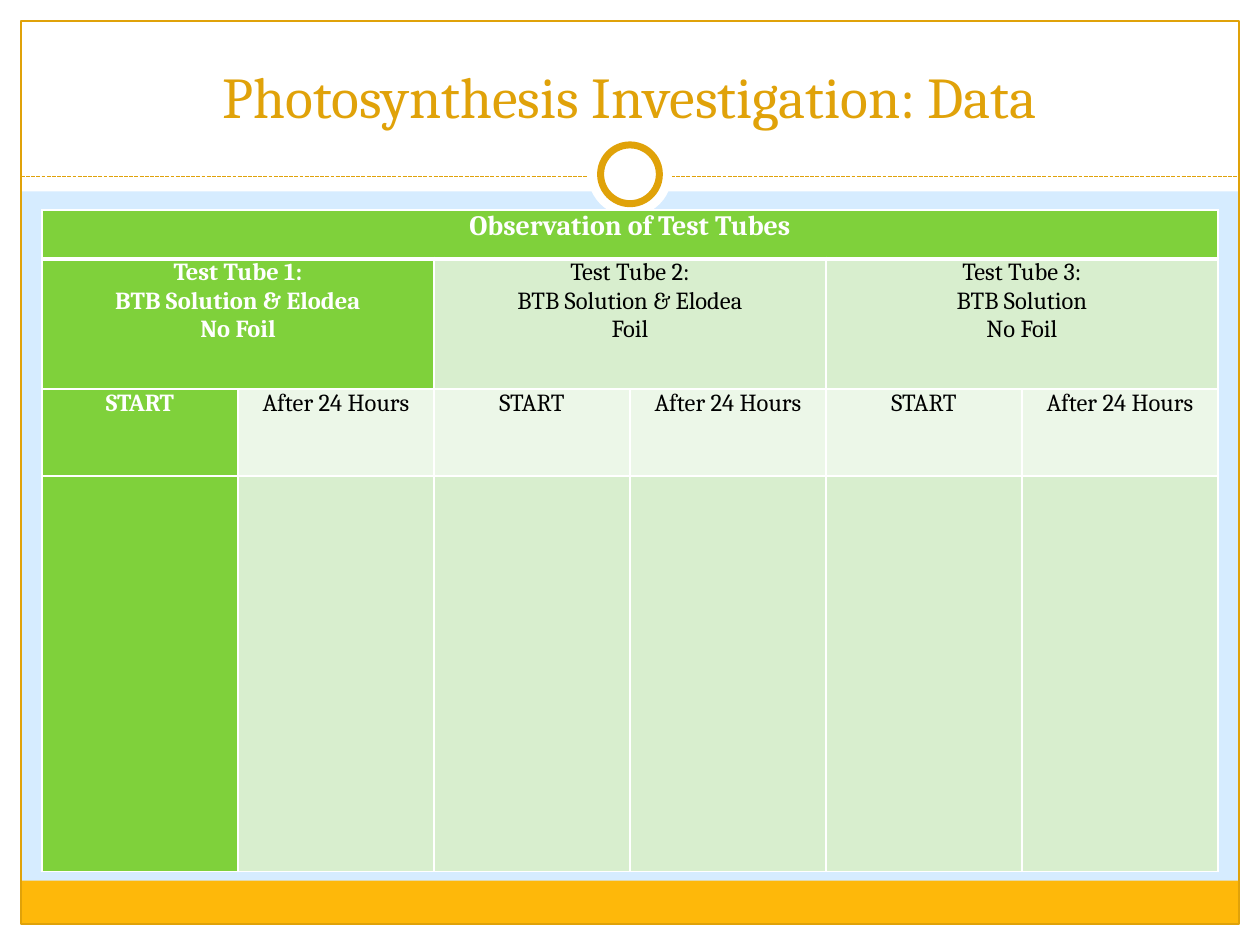
import pptx
import pptx.dml.color
import pptx.enum.dml
import pptx.enum.shapes
import pptx.enum.text
import pptx.oxml
import pptx.oxml.ns
import pptx.util

COLS, ROWS = 60, 45
WHITE, GOLD, AMBER, SKY = "FFFFFF", "E0A209", "FEB80A", "D6ECFF"
GREEN, MID_GREEN, PALE_GREEN = "7FD13B", "D8EECE", "ECF7E8"
RECT = pptx.enum.shapes.MSO_SHAPE.RECTANGLE
OVAL = pptx.enum.shapes.MSO_SHAPE.OVAL


def rgb(value):
    return pptx.dml.color.RGBColor.from_string(value)


class Deck:
    font = "Cambria"

    def __init__(self):
        self.prs = pptx.Presentation()
        self.prs.slide_width = pptx.util.Inches(10)
        self.prs.slide_height = pptx.util.Inches(7.5)
        self.s = self.prs.slides.add_slide(self.prs.slide_layouts[6])
        self.s.background.fill.solid()
        self.s.background.fill.fore_color.rgb = rgb(SKY)

    def x(self, cols):
        return round(self.prs.slide_width * cols / COLS)

    def y(self, rows):
        return round(self.prs.slide_height * rows / ROWS)

    def box(self, left, top, width, height):
        return self.x(left), self.y(top), self.x(width), self.y(height)

    def shape(self, kind, place, fill=None, line=None, weight=0.75):
        sp = self.s.shapes.add_shape(kind, *self.box(*place))
        sp.shadow.inherit = False
        if fill:
            sp.fill.solid()
            sp.fill.fore_color.rgb = rgb(fill)
        else:
            sp.fill.background()
        if line:
            sp.line.color.rgb = rgb(line)
            sp.line.width = pptx.util.Pt(weight)
        else:
            sp.line.fill.background()

    def dashed_line(self, left, right, row):
        sp = self.s.shapes.add_connector(
            pptx.enum.shapes.MSO_CONNECTOR.STRAIGHT,
            self.x(left), self.y(row), self.x(right), self.y(row))
        sp.line.color.rgb = rgb(GOLD)
        sp.line.width = pptx.util.Pt(0.75)
        sp.line.dash_style = pptx.enum.dml.MSO_LINE.SQUARE_DOT
        props = sp._element.spPr
        props.append(props.makeelement(pptx.oxml.ns.qn("a:effectLst"), {}))

    def paragraphs(self, tf, lines, size, color, bold=False):
        for i, line in enumerate(lines):
            p = tf.add_paragraph() if i else tf.paragraphs[0]
            p.text = line
            p.alignment = pptx.enum.text.PP_ALIGN.CENTER
            p.font.name = self.font
            p.font.size = pptx.util.Pt(size)
            p.font.bold = bold
            p.font.color.rgb = rgb(color)

    def title(self, text, place):
        tf = self.s.shapes.add_textbox(*self.box(*place)).text_frame
        tf.word_wrap = True
        tf.vertical_anchor = pptx.enum.text.MSO_ANCHOR.BOTTOM
        self.paragraphs(tf, [text], 33, GOLD)

    def borders(self, cell, **weights):
        props = cell._tc.get_or_add_tcPr()
        for side in "LRTB":
            width = pptx.util.Pt(weights.get(side, 1))
            props.append(pptx.oxml.parse_xml(
                f'<a:ln{side} {pptx.oxml.ns.nsdecls("a")} w="{width}"><a:solidFill>'
                f'<a:srgbClr val="{WHITE}"/></a:solidFill></a:ln{side}>'))

    def table(self, place, heights, texts, spans, fills):
        count = len(texts[-1])
        table = self.s.shapes.add_table(len(texts), count, *self.box(*place)).table
        for c in range(count):
            table.columns[c].width = self.x(place[2] / count)
        for r, height in enumerate(heights):
            table.rows[r].height = self.y(height)
            for c in range(count):
                cell = table.cell(r, c)
                header = r == 0 or c < spans[r]
                self.borders(cell, **{0: {"B": 3}, 1: {"T": 3}}.get(r, {}))
                cell.fill.solid()
                cell.fill.fore_color.rgb = rgb(GREEN if header else fills[r])
                cell.margin_left = cell.margin_right = pptx.util.Inches(0.07)
                cell.margin_top = cell.margin_bottom = 0
                if c % spans[r] == 0:
                    if spans[r] > 1:
                        cell.merge(table.cell(r, c + spans[r] - 1))
                    self.paragraphs(cell.text_frame, texts[r][c // spans[r]],
                                    16 if r == 0 else 14,
                                    WHITE if header else "000000", header)


def main():
    deck = Deck()
    for place in [(0, 44, 60, 1), (0, 0, 60, 9.12), (0, 0, 1, 45), (59, 0, 1, 45)]:
        deck.shape(RECT, place, WHITE)
    deck.shape(RECT, (1, 41.94, 58, 2.06), AMBER)
    deck.shape(RECT, (1, 1, 58, 43), line=GOLD)
    deck.dashed_line(1, 59, 8.4)
    deck.shape(OVAL, (28, 6.3, 4, 4), WHITE)
    deck.shape(OVAL, (28.6, 6.9, 2.8, 2.8), WHITE, GOLD, 4)
    deck.title("Photosynthesis Investigation: Data", (2, 1.5, 56, 5))
    tubes = [
        ["Test Tube 1:", "BTB Solution & Elodea", "No Foil"],
        ["Test Tube 2:", "BTB Solution & Elodea", "Foil"],
        ["Test Tube 3:", "BTB Solution", "No Foil"],
    ]
    deck.table(
        (2, 10, 56, 31.5),
        heights=[2.33, 6.2, 4.13, 18.84],
        texts=[[["Observation of Test Tubes"]], tubes,
               [["START"], ["After 24 Hours"]] * 3, [[]] * 6],
        spans=[6, 2, 1, 1],
        fills=[GREEN, MID_GREEN, PALE_GREEN, MID_GREEN])
    deck.prs.save("out.pptx")


if __name__ == "__main__":
    main()
